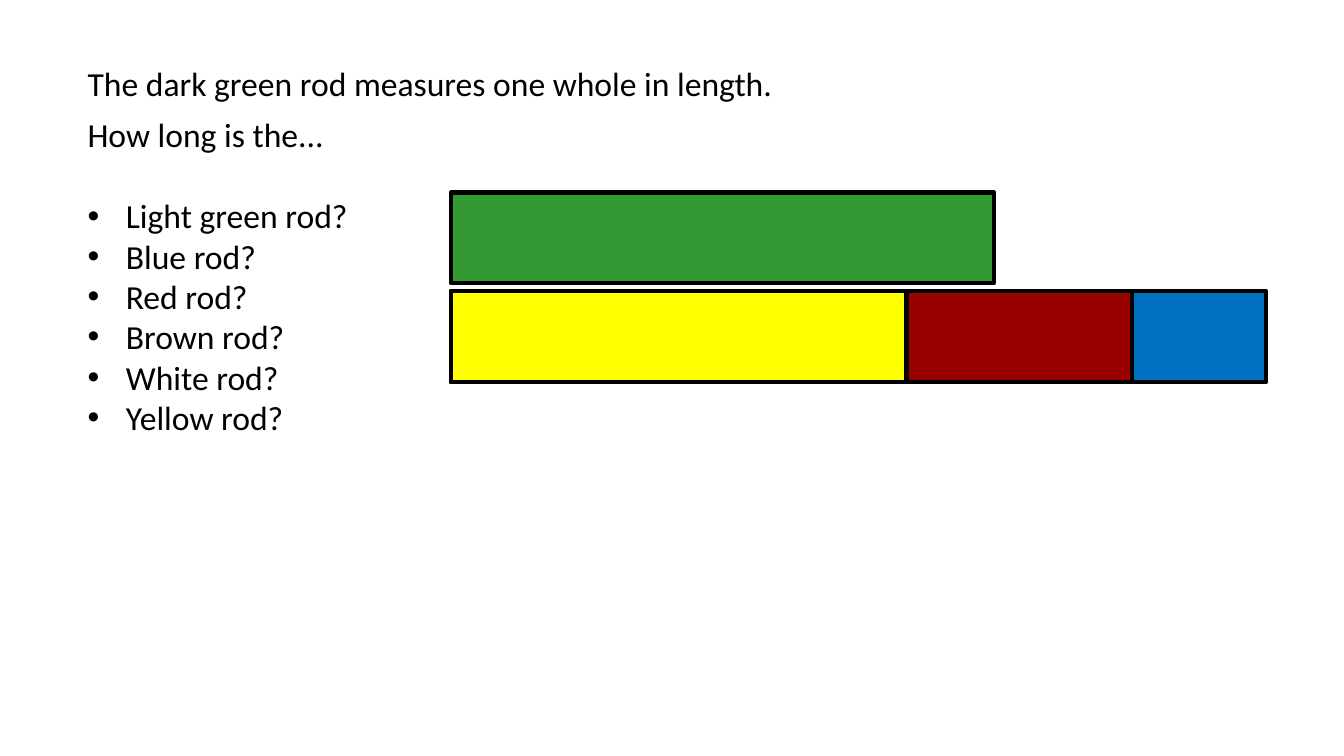
from lxml import etree
from pptx import Presentation
from pptx.dml.color import RGBColor
from pptx.enum import shapes, text
from pptx.oxml import ns
from pptx.util import Inches, Pt

# Content
INTRO = ["The dark green rod measures one whole in length.", "How long is the..."]
QUESTIONS = ["Light green rod?", "Blue rod?", "Red rod?",
             "Brown rod?", "White rod?", "Yellow rod?"]
# Rods from back to front: colour, row, left, width
RODS = [
    ("339933", 0, 4.47, 5.39),
    ("0070C0", 1, 4.48, 8.08),
    ("990000", 1, 4.47, 6.76),
    ("FFFF00", 1, 4.47, 4.52),
]
ROD_TOP, ROD_HEIGHT, ROW_STEP = 1.91, 0.9, 0.98
INDENT = Inches(0.38)
LINE_GAP, LIST_GAP = Pt(7.3), Pt(29.3)
BLACK = "000000"


def rgb(value):
    return RGBColor.from_string(value)


def add_bullet(p):
    pPr = p._p.get_or_add_pPr()
    pPr.set("marL", str(INDENT))
    pPr.set("indent", str(-INDENT))
    etree.SubElement(pPr, ns.qn("a:buFont")).set("typeface", "Arial")
    etree.SubElement(pPr, ns.qn("a:buChar")).set("char", "•")


def add_questions(s):
    box = s.shapes.add_textbox(Inches(0.77), Inches(0.58), Inches(8.79), Inches(3.84))
    tf = box.text_frame
    tf.word_wrap = True
    tf.auto_size = text.MSO_AUTO_SIZE.SHAPE_TO_FIT_TEXT
    for i, line in enumerate(INTRO + QUESTIONS):
        p = tf.paragraphs[0] if i == 0 else tf.add_paragraph()
        if i >= len(INTRO):
            add_bullet(p)
        if i == len(INTRO):
            p.space_before = LIST_GAP
        elif 0 < i < len(INTRO):
            p.space_before = LINE_GAP
        r = p.add_run()
        r.text = line
        r.font.name, r.font.size = "Calibri", Pt(24)
        r.font.color.rgb = rgb(BLACK)


def add_rod(s, colour, row, left, width):
    sp = s.shapes.add_shape(
        shapes.MSO_SHAPE.RECTANGLE, Inches(left), Inches(ROD_TOP + row * ROW_STEP),
        Inches(width), Inches(ROD_HEIGHT))
    sp.shadow.inherit = False
    sp.fill.solid()
    sp.fill.fore_color.rgb = rgb(colour)
    sp.line.color.rgb = rgb(BLACK)
    sp.line.width = Pt(3)


def main():
    prs = Presentation()
    prs.slide_width, prs.slide_height = Inches(13.33), Inches(7.5)
    s = prs.slides.add_slide(prs.slide_layouts[6])
    add_questions(s)
    for rod in RODS:
        add_rod(s, *rod)
    prs.save("out.pptx")


if __name__ == "__main__":
    main()
